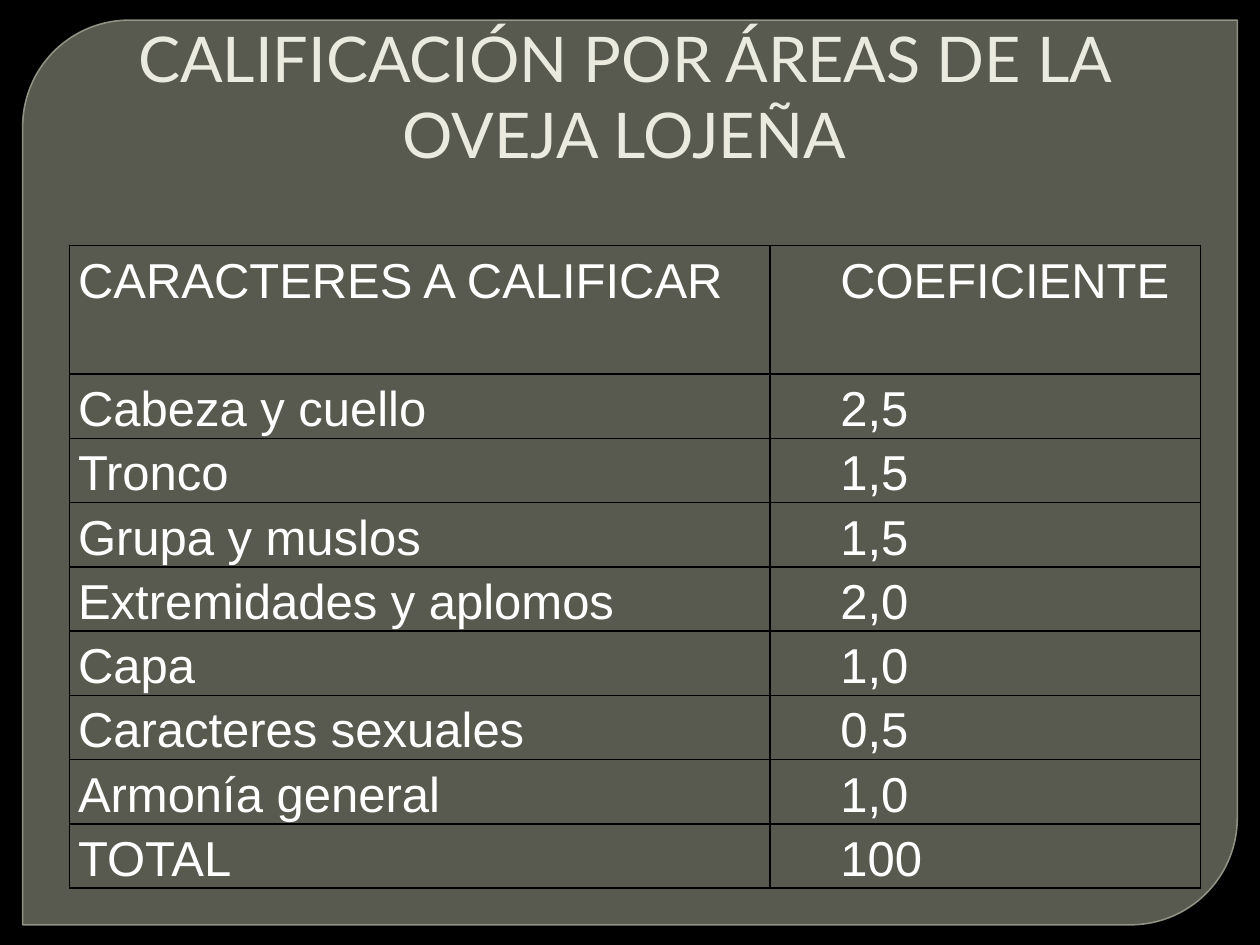
import pptx
import pptx.util
import pptx.dml.color
import pptx.enum.shapes
import pptx.enum.text
import pptx.oxml
import pptx.oxml.ns
from pptx.util import Inches

COLORS = {
    "background": "000000",
    "panel": "888B7B",
    "panel_line": "9DA090",
    "title": "EAEBDE",
    "text": "FFFFFF",
    "border": "000000",
}
ROWS = [
    ("CARACTERES A CALIFICAR", "COEFICIENTE"),
    ("Cabeza y cuello", "2,5"),
    ("Tronco", "1,5"),
    ("Grupa y muslos", "1,5"),
    ("Extremidades y aplomos", "2,0"),
    ("Capa", "1,0"),
    ("Caracteres sexuales", "0,5"),
    ("Armonía general", "1,0"),
    ("TOTAL", "100"),
]
ALIGN = pptx.enum.text.PP_ALIGN
ANCHOR = pptx.enum.text.MSO_ANCHOR


def rgb(name):
    return pptx.dml.color.RGBColor.from_string(COLORS[name])


def write_text(tf, text, font, size, color, align, spacing=None, after=0, indent=0):
    tf.word_wrap = True
    p = tf.paragraphs[0]
    p.alignment = align
    p.space_before = pptx.util.Pt(0)
    p.space_after = pptx.util.Pt(after)
    if spacing:
        p.line_spacing = spacing
    if indent:
        pPr = p._p.get_or_add_pPr()
        pPr.set("marL", "0")
        pPr.set("indent", str(indent))
    r = p.add_run()
    r.text = text
    r.font.name = font
    r.font.size = pptx.util.Pt(size)
    r.font.color.rgb = rgb(color)


def set_alpha(fill_parent, percent):
    color = fill_parent.find(".//" + pptx.oxml.ns.qn("a:srgbClr"))
    alpha = pptx.oxml.parse_xml(
        f'<a:alpha {pptx.oxml.ns.nsdecls("a")} val="{percent * 1000}"/>')
    color.append(alpha)


def set_borders(cell, color, width):
    tcPr = cell._tc.get_or_add_tcPr()
    for i, side in enumerate(("lnL", "lnR", "lnT", "lnB")):
        ln = pptx.oxml.parse_xml(
            f'<a:{side} {pptx.oxml.ns.nsdecls("a")} w="{pptx.util.Pt(width)}">'
            f'<a:solidFill><a:srgbClr val="{COLORS[color]}"/></a:solidFill></a:{side}>')
        tcPr.insert(i, ln)


def add_panel(s, left, top, width, height):
    sp = s.shapes.add_shape(
        pptx.enum.shapes.MSO_SHAPE.ROUND_2_DIAG_RECTANGLE, left, top, width, height)
    sp.adjustments[0] = 0.118
    sp.adjustments[1] = 0
    sp.shadow.inherit = False
    sp.fill.solid()
    sp.fill.fore_color.rgb = rgb("panel")
    sp.line.color.rgb = rgb("panel_line")
    sp.line.width = pptx.util.Pt(0.87)
    spPr = sp._element.spPr
    set_alpha(spPr.find(pptx.oxml.ns.qn("a:solidFill")), 65)
    set_alpha(spPr.find(pptx.oxml.ns.qn("a:ln")), 88)
    s.shapes._spTree.insert(2, sp._element)


def add_title(s, left, top, width, height):
    title = s.shapes.title
    title.left, title.top, title.width, title.height = left, top, width, height
    tf = title.text_frame
    tf.vertical_anchor = ANCHOR.MIDDLE
    write_text(tf, "CALIFICACIÓN POR ÁREAS DE LA OVEJA LOJEÑA",
               font="Lato", size=36, color="title", align=ALIGN.CENTER)


def add_score_table(s, left, top, width, height):
    table = s.shapes.add_table(len(ROWS), 2, left, top, width, height).table
    table.first_row = False
    table.horz_banding = False
    table.columns[0].width = Inches(5.56)
    table.columns[1].width = width - Inches(5.56)
    unit = height // (len(ROWS) + 1)
    for i, values in enumerate(ROWS):
        table.rows[i].height = unit * 2 if i == 0 else unit
        for j, value in enumerate(values):
            cell = table.cell(i, j)
            cell.margin_left = cell.margin_right = Inches(0.07)
            cell.margin_top = cell.margin_bottom = 0
            cell.vertical_anchor = ANCHOR.TOP
            cell.fill.background()
            set_borders(cell, "border", 1)
            write_text(cell.text_frame, value, font="Arial", size=28, color="text",
                       align=ALIGN.JUSTIFY, spacing=1.15, after=10,
                       indent=Inches(0.49) if j else 0)


def main():
    prs = pptx.Presentation()
    prs.slide_width, prs.slide_height = Inches(10), Inches(7.5)
    s = prs.slides.add_slide(prs.slide_layouts[5])
    s.background.fill.solid()
    s.background.fill.fore_color.rgb = rgb("background")
    add_panel(s, Inches(0.18), Inches(0.16), Inches(9.64), Inches(7.18))
    add_title(s, Inches(0.27), Inches(0), Inches(9.37), Inches(1.51))
    add_score_table(s, Inches(0.55), Inches(1.95), Inches(8.98), Inches(5.1))
    prs.save("out.pptx")


if __name__ == "__main__":
    main()
